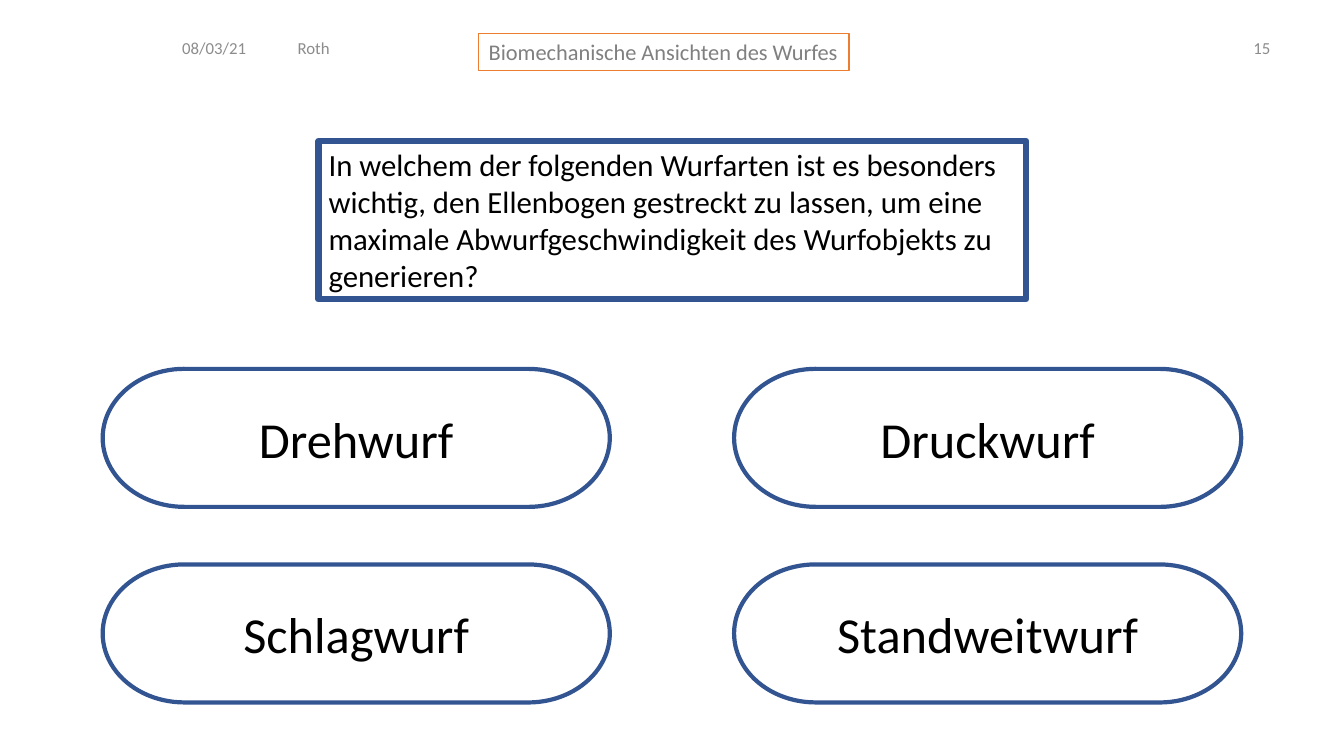
import pptx
import pptx.util
import pptx.dml.color
import pptx.enum.shapes
import pptx.enum.text
from dataclasses import dataclass

Pt = pptx.util.Pt
SHAPES = pptx.enum.shapes.MSO_SHAPE
ALIGN = pptx.enum.text.PP_ALIGN
ANCHOR = pptx.enum.text.MSO_ANCHOR

HEADER = "Biomechanische Ansichten des Wurfes"
QUESTION = (
    "In welchem der folgenden Wurfarten ist es besonders wichtig, den Ellenbogen "
    "gestreckt zu lassen, um eine maximale Abwurfgeschwindigkeit des Wurfobjekts "
    "zu generieren?"
)
ANSWERS = [["Drehwurf", "Druckwurf"], ["Schlagwurf", "Standweitwurf"]]
# text, left, width, alignment
META_LINE = [
    ("08/03/21", 123, 83, ALIGN.LEFT),
    ("Roth", 205.5, 119, ALIGN.LEFT),
    ("15", 698.5, 216, ALIGN.RIGHT),
]

# left, top, width, height in points
HEADER_BOX = (342, 23.8, 264.5, 26.6)
QUESTION_BOX = (227.5, 100.8, 505.5, 113)
META_TOP, META_HEIGHT = 19.5, 28.8
ANSWER_LEFT, ANSWER_TOP = 73.4, 263.5
ANSWER_WIDTH, ANSWER_HEIGHT = 362.2, 98.6
COLUMN_STEP, ROW_STEP = 451, 139.7


@dataclass(frozen=True)
class Theme:
    font: str = "Calibri"
    white: str = "FFFFFF"
    black: str = "000000"
    blue: str = "325491"
    orange: str = "ED7D31"
    header_gray: str = "808080"
    meta_gray: str = "8C8C8C"
    meta_size: float = 12
    header_size: float = 16
    question_size: float = 22
    answer_size: float = 36


THEME = Theme()


def rgb(color):
    return pptx.dml.color.RGBColor.from_string(color)


def write(shape, text, size, color, alignment=ALIGN.LEFT, anchor=ANCHOR.MIDDLE, wrap=True):
    frame = shape.text_frame
    frame.text = text
    frame.word_wrap = wrap
    frame.auto_size = pptx.enum.text.MSO_AUTO_SIZE.NONE
    frame.vertical_anchor = anchor
    paragraph = frame.paragraphs[0]
    paragraph.alignment = alignment
    paragraph.line_spacing = 1.0
    font = paragraph.runs[0].font
    font.name = THEME.font
    font.size = Pt(size)
    font.color.rgb = rgb(color)


def add_outlined(slide, kind, box, color, weight, fill=None):
    shape = slide.shapes.add_shape(kind, *map(Pt, box))
    shape.shadow.inherit = False
    if fill:
        shape.fill.solid()
        shape.fill.fore_color.rgb = rgb(fill)
    else:
        shape.fill.background()
    shape.line.color.rgb = rgb(color)
    shape.line.width = Pt(weight)
    return shape


def add_header(slide):
    box = add_outlined(slide, SHAPES.RECTANGLE, HEADER_BOX, THEME.orange, 1, THEME.white)
    write(box, HEADER, THEME.header_size, THEME.header_gray, anchor=ANCHOR.TOP, wrap=False)
    for text, left, width, alignment in META_LINE:
        box = slide.shapes.add_textbox(Pt(left), Pt(META_TOP), Pt(width), Pt(META_HEIGHT))
        write(box, text, THEME.meta_size, THEME.meta_gray, alignment)


def add_question(slide):
    add_outlined(slide, SHAPES.FLOWCHART_PROCESS, QUESTION_BOX, THEME.blue, 4.5)
    title = slide.shapes.title
    title.left, title.top, title.width, title.height = map(Pt, QUESTION_BOX)
    write(title, QUESTION, THEME.question_size, THEME.black, anchor=ANCHOR.TOP)


def add_answers(slide):
    for row, answers in enumerate(ANSWERS):
        for column, answer in enumerate(answers):
            box = (
                ANSWER_LEFT + column * COLUMN_STEP,
                ANSWER_TOP + row * ROW_STEP,
                ANSWER_WIDTH,
                ANSWER_HEIGHT,
            )
            shape = add_outlined(slide, SHAPES.FLOWCHART_TERMINATOR, box, THEME.blue, 3)
            write(shape, answer, THEME.answer_size, THEME.black, ALIGN.CENTER)


def main():
    presentation = pptx.Presentation()
    presentation.slide_width, presentation.slide_height = Pt(960), Pt(540)
    slide = presentation.slides.add_slide(presentation.slide_layouts.get_by_name("Title Only"))
    add_header(slide)
    add_question(slide)
    add_answers(slide)
    presentation.save("out.pptx")


if __name__ == "__main__":
    main()
